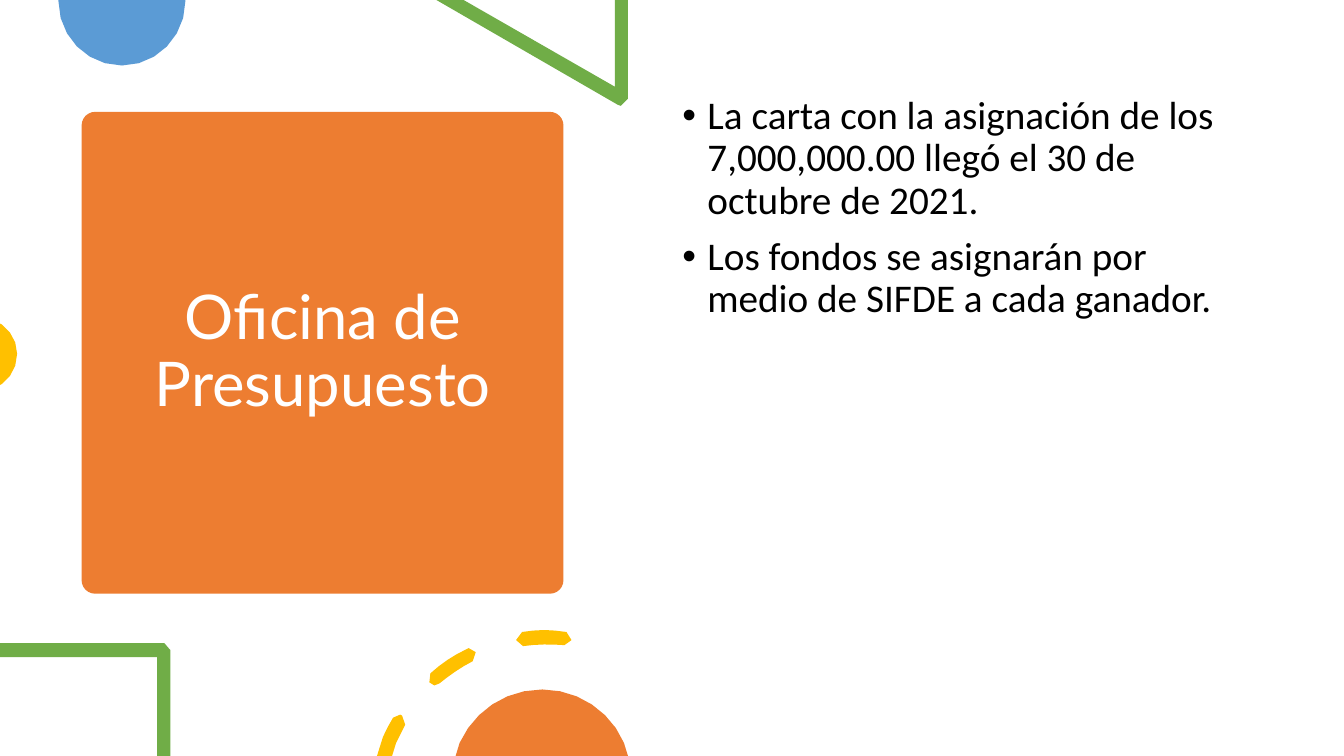
import math

import pptx
import pptx.dml.color
import pptx.enum.shapes
import pptx.enum.text
import pptx.util
from lxml import etree

PX = 9144  # EMU in one px, at 100 px to the inch
ORANGE, GREEN, BLUE, YELLOW = "ED7D31", "70AD47", "5B9BD5", "FFC000"
DRAWING = "{http://schemas.openxmlformats.org/drawingml/2006/main}"

# In an outline, a pair is a straight line to a point;
# six numbers are two control points and the end of a curve.
BLUE_CIRCLE = [[(184, 0), (58, 0), (58, 1), (58, 36, 86, 65, 121, 65),
                (156, 65, 184, 36, 184, 1)]]
TRIANGLE = [[(623, 0), (610, 0), (610, 86), (460, 0), (433, 0), (613, 104),
             (614, 105, 615, 105, 616, 105), (620, 105, 623, 102, 623, 98)]]
YELLOW_CIRCLE = [[(0, 321), (0, 382), (2, 381), (11, 374, 17, 364, 17, 351),
                  (17, 339, 11, 329, 2, 322)]]
SQUARE = [[(163, 638), (0, 638), (0, 652), (156, 652), (156, 750), (169, 750),
           (169, 645), (169, 641, 166, 638, 163, 638)]]
DASHES = [
    [(397, 709), (394, 708, 392, 710, 390, 712), (386, 718, 383, 725, 380, 731),
     (374, 750), (389, 750), (393, 737), (396, 731, 399, 725, 402, 719),
     (404, 716, 403, 711, 399, 710)],
    [(465, 643), (463, 644), (450, 650, 438, 658, 427, 668),
     (424, 670, 424, 675, 426, 677), (427, 679, 429, 680, 431, 680),
     (433, 680, 435, 679, 436, 678), (446, 670, 457, 662, 469, 656),
     (473, 654, 474, 650, 472, 647), (471, 644, 468, 643, 465, 643)],
    [(540, 625), (532, 625, 525, 626, 518, 627), (514, 627, 511, 631, 512, 635),
     (512, 638, 515, 641, 519, 641), (533, 639, 546, 639, 560, 640),
     (563, 641, 567, 638, 567, 635), (568, 631, 565, 627, 562, 627),
     (554, 626, 547, 625, 540, 625)],
]
ORANGE_CIRCLE = [[(538, 684), (501, 684, 470, 706, 456, 737), (452, 750),
                  (623, 750), (619, 737), (606, 706, 574, 684, 538, 684)]]


def color(value):
    return pptx.dml.color.RGBColor.from_string(value)


def emu(*lengths):
    return [pptx.util.Emu(length * PX) for length in lengths]


def paint(shape, fill):
    shape.shadow.inherit = False
    shape.fill.solid()
    shape.fill.fore_color.rgb = color(fill)
    shape.line.fill.background()


def write_text(paragraph, text, *, size, font, fill, align, before=0):
    paragraph.alignment = align
    paragraph.line_spacing = 0.9
    paragraph.space_before = pptx.util.Pt(before)
    run = paragraph.add_run()
    run.text = text
    run.font.size = pptx.util.Pt(size)
    run.font.name = font
    run.font.color.rgb = color(fill)


def add_bullet(paragraph, indent):
    properties = paragraph._p.get_or_add_pPr()
    properties.set("marL", str(indent * PX))
    properties.set("indent", str(-indent * PX))
    etree.SubElement(properties, DRAWING + "buFont", typeface="Arial")
    etree.SubElement(properties, DRAWING + "buChar", char="•")


def trace(contour):
    """Turn a contour into points in EMU, with more points on longer curves."""
    points = []
    for step in contour:
        if len(step) == 2:
            points.append(step)
            continue
        x0, y0 = points[-1]
        x1, y1, x2, y2, x3, y3 = step
        count = min(6, max(1, round(math.dist((x0, y0), (x3, y3)) / 10)))
        for index in range(1, count + 1):
            t = index / count
            u = 1 - t
            a, b, c, d = u ** 3, 3 * u * u * t, 3 * u * t * t, t ** 3
            points.append((a * x0 + b * x1 + c * x2 + d * x3,
                           a * y0 + b * y1 + c * y2 + d * y3))
    if points[-1] == points[0]:
        points.pop()
    return [(round(x * PX), round(y * PX)) for x, y in points]


def add_outline(slide, contours, fill):
    first, *others = [trace(contour) for contour in contours]
    builder = slide.shapes.build_freeform(*first[0], scale=1.0)
    builder.add_line_segments(first[1:], close=True)
    for points in others:
        builder.move_to(*points[0])
        builder.add_line_segments(points[1:], close=True)
    paint(builder.convert_to_shape(), fill)


def add_title_card(slide, left, top, side, text):
    card = slide.shapes.add_shape(
        pptx.enum.shapes.MSO_SHAPE.ROUNDED_RECTANGLE, *emu(left, top, side, side))
    card.adjustments[0] = 0.028
    paint(card, ORANGE)

    title = slide.shapes.title
    title.left, title.top, title.width, title.height = emu(
        left + 24, top + 11, side - 47, side - 22)
    title.element.addprevious(card.element)
    title.text_frame.word_wrap = True
    title.text_frame.vertical_anchor = pptx.enum.text.MSO_ANCHOR.MIDDLE
    write_text(title.text_frame.paragraphs[0], text, size=44, font="Lato",
               fill="FFFFFF", align=pptx.enum.text.PP_ALIGN.CENTER)


def add_bullet_list(slide, left, top, width, height, items):
    frame = slide.shapes.add_textbox(*emu(left, top, width, height)).text_frame
    frame.word_wrap = True
    for index, item in enumerate(items):
        paragraph = frame.add_paragraph() if index else frame.paragraphs[0]
        write_text(paragraph, item, size=28, font="Calibri", fill="000000",
                   align=pptx.enum.text.PP_ALIGN.LEFT, before=10)
        add_bullet(paragraph, 25)


def add_decoration(slide, outlines):
    for contours, fill in outlines:
        add_outline(slide, contours, fill)


def main():
    presentation = pptx.Presentation()
    presentation.slide_height = pptx.util.Emu(750 * PX)
    presentation.slide_width = pptx.util.Emu(750 * PX * 16 // 9)
    slide = presentation.slides.add_slide(presentation.slide_layouts[5])
    add_title_card(slide, 81, 111, 478, "Oficina de Presupuesto")
    add_decoration(slide, [
        (BLUE_CIRCLE, BLUE), (TRIANGLE, GREEN), (YELLOW_CIRCLE, YELLOW)])
    add_bullet_list(slide, 667, 90, 575, 535, [
        "La carta con la asignación de los 7,000,000.00 llegó el 30 de octubre de 2021.",
        "Los fondos se asignarán por medio de SIFDE a cada ganador.",
    ])
    add_decoration(slide, [
        (SQUARE, GREEN), (DASHES, YELLOW), (ORANGE_CIRCLE, ORANGE)])
    presentation.save("out.pptx")


if __name__ == "__main__":
    main()
